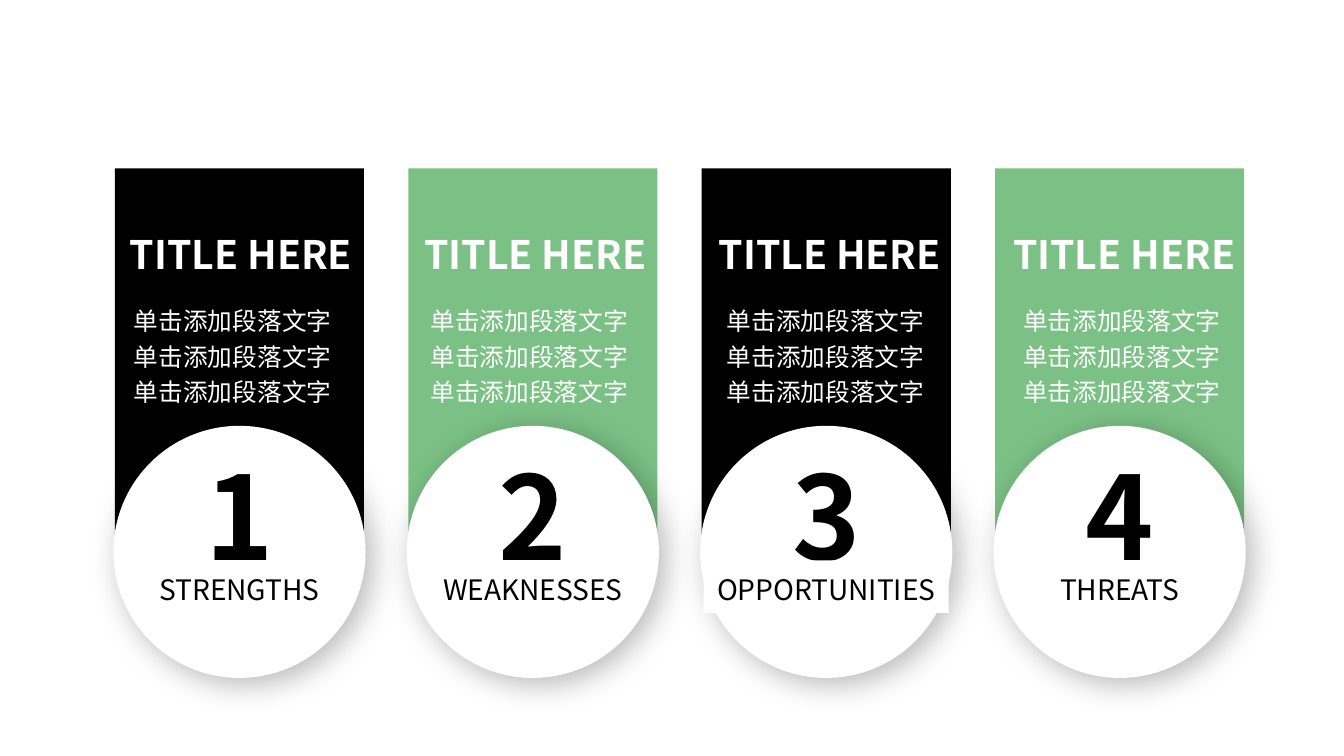
from dataclasses import dataclass

from lxml.etree import SubElement
from pptx import Presentation
from pptx.dml.color import RGBColor
from pptx.enum.shapes import MSO_SHAPE
from pptx.enum.text import MSO_AUTO_SIZE, PP_ALIGN
from pptx.oxml.ns import qn
from pptx.shapes.autoshape import Shape
from pptx.slide import Slide
from pptx.text.text import Font
from pptx.util import Inches, Pt


@dataclass(frozen=True)
class Theme:
    font: str = "Noto Sans CJK SC"
    black: RGBColor = RGBColor(0x00, 0x00, 0x00)
    green: RGBColor = RGBColor(0x7B, 0xC1, 0x85)
    white: RGBColor = RGBColor(0xFF, 0xFF, 0xFF)
    heading_size: float = 28
    body_size: float = 17.6
    number_size: float = 82.8
    label_size: float = 25.1


@dataclass(frozen=True)
class Column:
    label: str
    label_width: float
    color: RGBColor


THEME = Theme()
COLUMNS = [
    Column("strengths", 1.84, THEME.black),
    Column("weaknesses", 2.05, THEME.green),
    Column("opportunities", 2.43, THEME.black),
    Column("threats", 1.42, THEME.green),
]
HEADING = "TITLE HERE"
BODY = "单击添加段落文字" * 3

FIRST_LEFT = 1.14
COLUMN_PITCH = 2.91
HEADING_PITCH = 2.92
BODY_PITCH = 2.94
DIAMETER = 2.47
CIRCLE_TOP = 4.24
BANNER_TOP = 1.67
BANNER_LENGTH = 4.54


def add_banner(slide: Slide, center: float, color: RGBColor) -> None:
    shape = slide.shapes.add_shape(
        MSO_SHAPE.PENTAGON,
        Inches(center - BANNER_LENGTH / 2),
        Inches(BANNER_TOP + (BANNER_LENGTH - DIAMETER) / 2),
        Inches(BANNER_LENGTH),
        Inches(DIAMETER),
    )
    shape.rotation = 90
    shape.adjustments[0] = 0.318
    shape.shadow.inherit = False
    shape.fill.solid()
    shape.fill.fore_color.rgb = color
    shape.line.fill.background()


def add_soft_shadow(shape: Shape) -> None:
    shape.shadow.inherit = False
    effects = shape._element.spPr.find(qn("a:effectLst"))
    shadow = SubElement(
        effects,
        qn("a:outerShdw"),
        blurRad=str(Pt(22)),
        dist=str(Pt(6)),
        dir=str(45 * 60000),
        algn="tl",
        rotWithShape="0",
    )
    color = SubElement(shadow, qn("a:srgbClr"), val=str(THEME.black))
    SubElement(color, qn("a:alpha"), val="28000")


def add_circle(slide: Slide, left: float) -> None:
    shape = slide.shapes.add_shape(
        MSO_SHAPE.OVAL, Inches(left), Inches(CIRCLE_TOP), Inches(DIAMETER), Inches(DIAMETER)
    )
    shape.fill.solid()
    shape.fill.fore_color.rgb = THEME.white
    shape.line.color.rgb = THEME.white
    shape.line.width = Pt(2.25)
    add_soft_shadow(shape)


def add_text(
    slide: Slide,
    text: str,
    left: float,
    top: float,
    width: float,
    height: float,
    size: float,
    color: RGBColor,
    bold: bool = False,
    line_spacing: float = 1.0,
) -> Shape:
    shape = slide.shapes.add_textbox(Inches(left), Inches(top), Inches(width), Inches(height))
    frame = shape.text_frame
    frame.word_wrap = True
    frame.auto_size = MSO_AUTO_SIZE.SHAPE_TO_FIT_TEXT
    paragraph = frame.paragraphs[0]
    paragraph.line_spacing = line_spacing
    run = paragraph.add_run()
    run.text = text
    font: Font = run.font
    font.name = THEME.font
    font.size = Pt(size)
    font.bold = bold
    font.color.rgb = color
    properties = run._r.get_or_add_rPr()
    SubElement(properties, qn("a:ea"), typeface=THEME.font)
    return shape


def add_badge_text(
    slide: Slide,
    text: str,
    center: float,
    top: float,
    width: float,
    height: float,
    size: float,
    bold: bool = False,
    small_caps: bool = False,
) -> None:
    shape = add_text(
        slide, text, center - width / 2, top, width, height, size, THEME.black, bold
    )
    shape.fill.solid()
    shape.fill.fore_color.rgb = THEME.white
    shape.text_frame.word_wrap = False
    paragraph = shape.text_frame.paragraphs[0]
    paragraph.alignment = PP_ALIGN.CENTER
    if small_caps:
        paragraph.runs[0]._r.get_or_add_rPr().set("cap", "small")


def add_column(slide: Slide, index: int, column: Column) -> None:
    left = FIRST_LEFT + index * COLUMN_PITCH
    center = left + DIAMETER / 2
    add_banner(slide, center, column.color)
    add_text(
        slide, BODY, 1.23 + index * BODY_PITCH, 2.93, 2.35, 1.16,
        THEME.body_size, THEME.white, line_spacing=1.2,
    )
    add_text(
        slide, HEADING, 1.19 + index * HEADING_PITCH, 2.24, 2.94, 0.57,
        THEME.heading_size, THEME.white, bold=True,
    )
    add_circle(slide, left)
    add_badge_text(
        slide, str(index + 1), center, 4.36, 0.92, 1.49, THEME.number_size, bold=True
    )
    add_badge_text(
        slide, column.label, center, 5.56, column.label_width, 0.52,
        THEME.label_size, small_caps=True,
    )


def main() -> None:
    presentation = Presentation()
    presentation.slide_width = Inches(13.33)
    presentation.slide_height = Inches(7.5)
    slide = presentation.slides.add_slide(presentation.slide_layouts[6])
    for index, column in enumerate(COLUMNS):
        add_column(slide, index, column)
    presentation.save("out.pptx")


if __name__ == "__main__":
    main()
